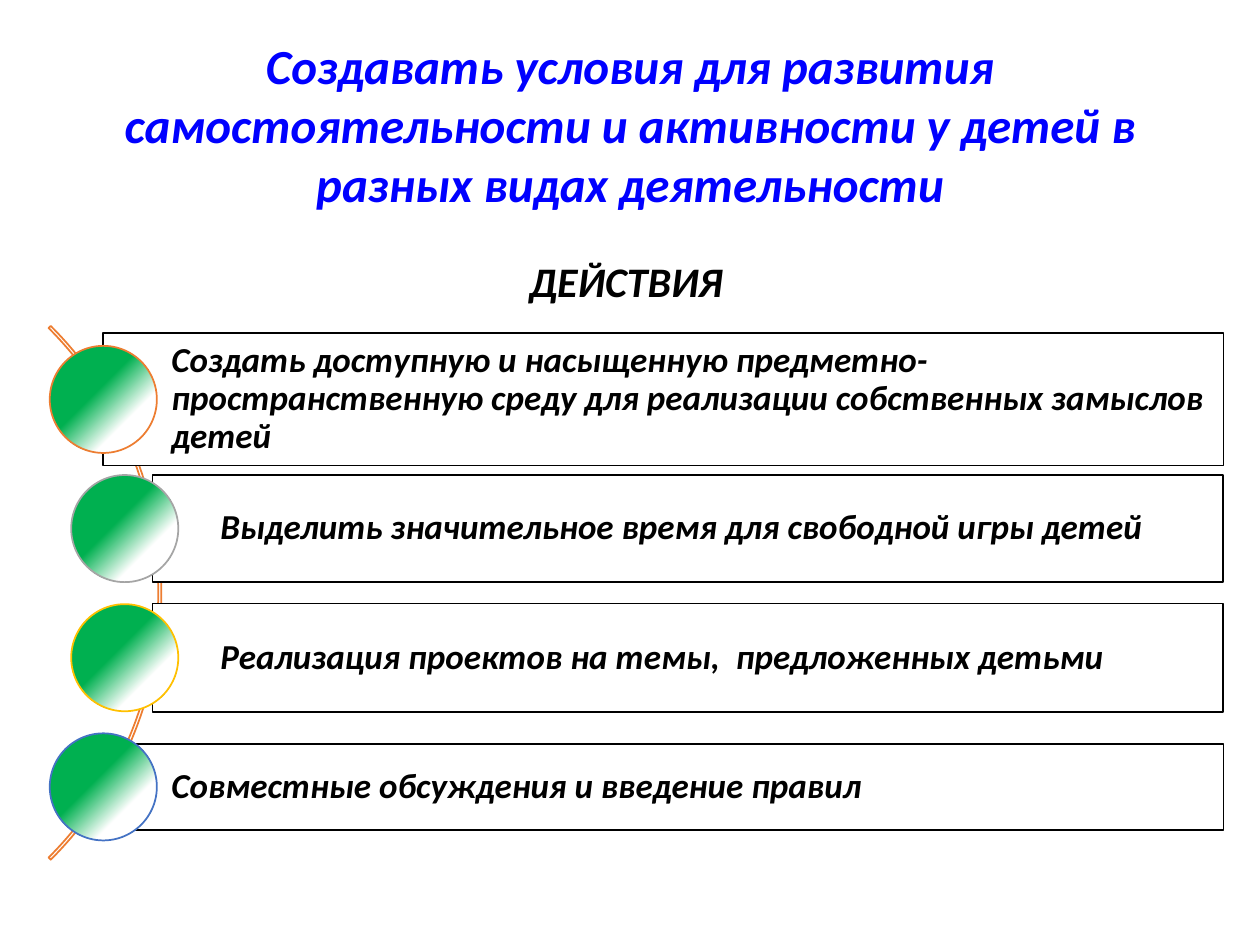
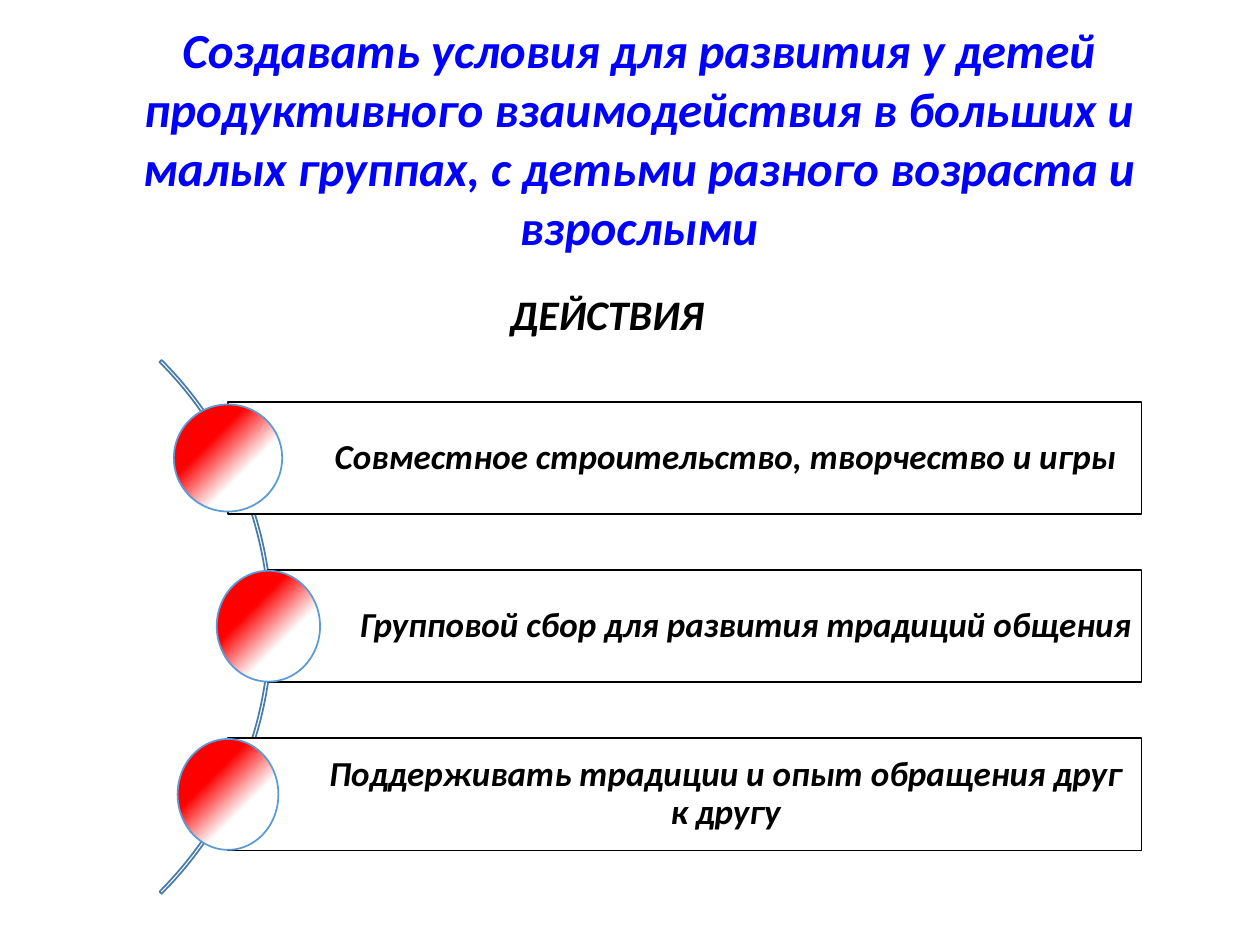
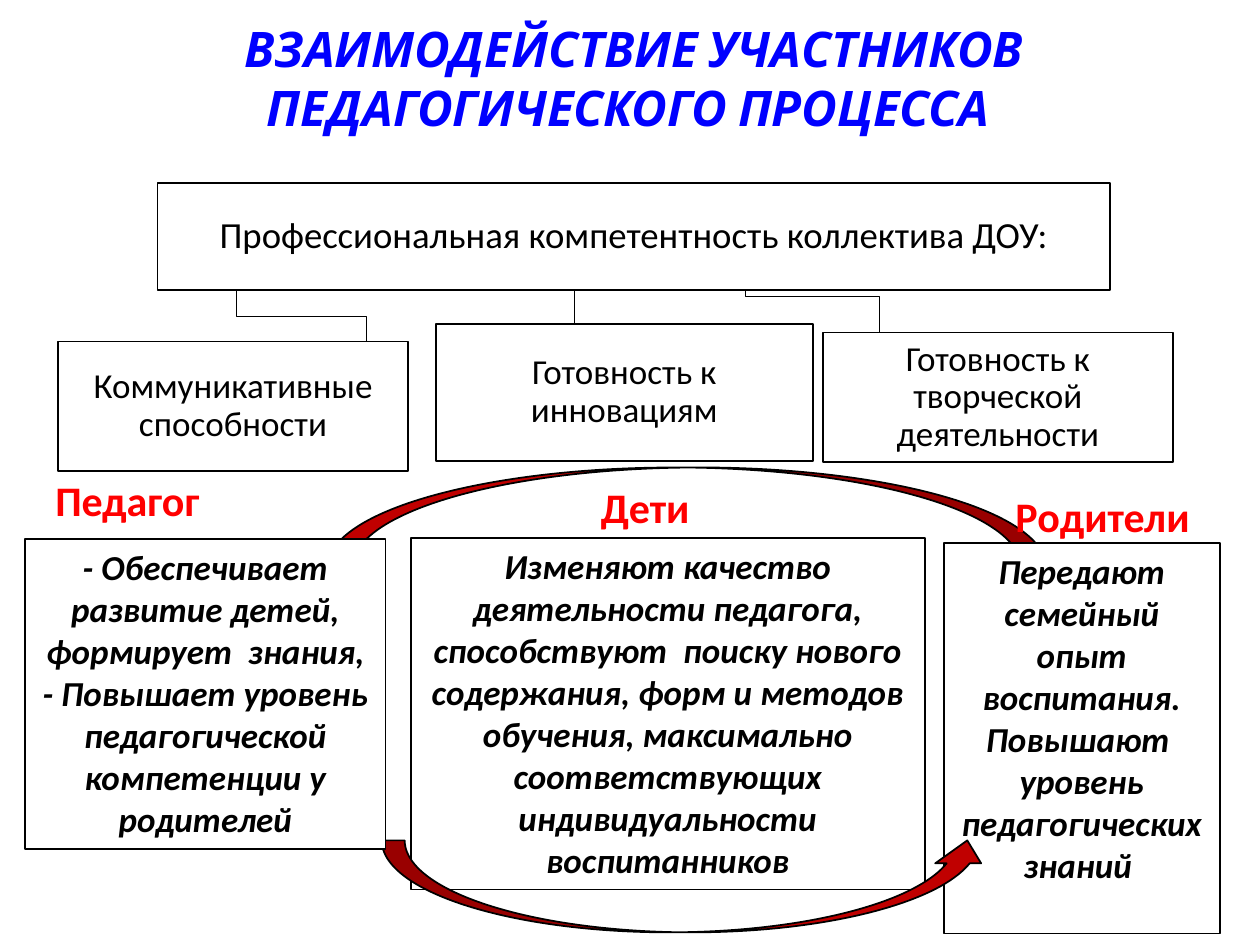
from lxml import etree
from pptx import Presentation, util as u
from pptx.dml.color import RGBColor
from pptx.enum import shapes as s, text as t
from pptx.oxml.ns import qn

WIDTH, HEIGHT = 10, 7.5
BLUE, BLACK, WHITE, RED, CRIMSON = "0000FF", "000000", "FFFFFF", "FF0000", "C00000"
BODY = "Calibri"
NO_BREAK_INSETS = (0.01,) * 4
ARC_SIZE = 5.99

ACTION_SLIDES = [
    dict(
        title="Создавать условия для развития самостоятельности и активности у детей в разных видах деятельности",
        title_at=(0.56, 0.15, 8.88, 1.68),
        heading_at=(4.1, 1.98, 2.15, 0.5),
        arc_at=(-4.71, 1.71), arc_line="ED7D31",
        first_centre=3.17, pitch=1.025, right=9.71, indent=0.54, align="LEFT",
        gradient=[(0, "00B050"), (43, "00B050"), (71, WHITE)],
        rows=[
            ("Создать доступную и насыщенную предметно-пространственную среду для реализации собственных замыслов детей",
             0.82, 1.05, 0.82, (0.85, 0.85), "ED7D31"),
            ("Выделить значительное время для свободной игры детей",
             1.21, 0.85, 0.99, (0.85, 0.85), "A5A5A5"),
            ("Реализация проектов на темы,  предложенных детьми",
             1.21, 0.86, 0.99, (0.85, 0.85), "FFC000"),
            ("Совместные обсуждения и введение правил",
             0.82, 0.68, 0.82, (0.85, 0.85), "4472C4"),
        ],
    ),
    dict(
        title="Создавать условия для развития у детей продуктивного взаимодействия в больших и малых группах, с детьми разного возраста и взрослыми",
        title_at=(0.5, 0, 9.14, 2.2),
        heading_at=(3.95, 2.24, 2.24, 0.5),
        arc_at=(-3.83, 1.98), arc_line="497CAB",
        first_centre=3.635, pitch=1.335, right=9.06, indent=0.71, align="CENTER",
        gradient=[(0, RED), (34, RED), (64, WHITE)],
        rows=[
            ("Совместное строительство, творчество и игры",
             1.81, 0.89, 1.81, (0.86, 0.85), "5B9BD5"),
            ("Групповой сбор для развития традиций общения",
             2.13, 0.89, 2.13, (0.82, 0.88), "5B9BD5"),
            ("Поддерживать традиции и опыт обращения друг к другу",
             1.81, 0.89, 1.81, (0.8, 0.88), "5B9BD5"),
        ],
    ),
]

PROCESS_TITLE = "ВЗАИМОДЕЙСТВИЕ УЧАСТНИКОВ ПЕДАГОГИЧЕСКОГО ПРОЦЕССА "
COMPETENCES = [
    ("Профессиональная компетентность коллектива ДОУ:", (1.25, 1.45, 7.56, 0.85), 21),
    ("Готовность к творческой деятельности", (6.53, 2.64, 2.78, 1.03), 20),
    ("Готовность к инновациям", (3.46, 2.57, 2.99, 1.09), 20),
    ("Коммуникативные способности", (0.46, 2.71, 2.78, 1.03), 20),
]
BRANCHES = [
    [(1.88, 2.31), (1.88, 2.51), (2.91, 2.51), (2.91, 2.71)],
    [(5.92, 2.3), (5.92, 2.35), (6.98, 2.35), (6.98, 2.64)],
]
STRAIGHT_BRANCH = (4.56, 2.3, 4.56, 2.57)
ROLES = [
    ("Педагог", (0.34, 3.72, 1.82, 0.5)),
    ("Дети", (4.67, 3.77, 0.95, 0.5)),
    ("Родители", (7.96, 3.84, 2.04, 0.5)),
]
CHILDREN = (["Изменяют качество деятельности педагога, способствуют  поиску нового содержания, форм и методов обучения, максимально соответствующих индивидуальности воспитанников"],
            (3.26, 4.27, 4.08, 2.79))
PARENTS = (["Передают семейный опыт воспитания.", "Повышают  уровень педагогических знаний "],
           (7.49, 4.31, 2.19, 3.1))
TEACHER = (["- Обеспечивает развитие детей, формирует  знания,\v- Повышает уровень педагогической компетенции у родителей"],
           (0.2, 4.28, 2.86, 2.46))
UPPER_ARROW = (2.5, 3.71, 5.8, 0.79)
LOWER_ARROW = (3.03, 6.67, 4.83, 0.73)


def inches(values):
    return [u.Inches(value) for value in values]


def colour(value):
    return RGBColor.from_string(value)


def outline(item, line, width=1):
    if line:
        item.line.color.rgb = colour(line)
        item.line.width = u.Pt(width)
    else:
        item.line.fill.background()


def shape(slide, kind, at, fill=WHITE, line=BLACK):
    item = slide.shapes.add_shape(getattr(s.MSO_SHAPE, kind), *inches(at))
    item.shadow.inherit = False
    if fill:
        item.fill.solid()
        item.fill.fore_color.rgb = colour(fill)
    else:
        item.fill.background()
    outline(item, line)
    return item


def write(item, paragraphs, size, ink=BLACK, font=BODY, bold=True, italic=True,
          align="CENTER", anchor="TOP", insets=(0.1, 0.05, 0.1, 0.05), spacing=None):
    frame = item.text_frame
    frame.word_wrap = True
    frame.vertical_anchor = getattr(t.MSO_ANCHOR, anchor)
    (frame.margin_left, frame.margin_top,
     frame.margin_right, frame.margin_bottom) = inches(insets)
    for index, words in enumerate(paragraphs):
        paragraph = frame.add_paragraph() if index else frame.paragraphs[0]
        paragraph.alignment = getattr(t.PP_ALIGN, align)
        if spacing:
            paragraph.line_spacing = spacing
        for part, line in enumerate(words.split("\v")):
            if part:
                paragraph.add_line_break()
            run = paragraph.add_run()
            run.text = line
            run.font.size = u.Pt(size)
            run.font.name = font
            run.font.bold, run.font.italic = bold, italic
            run.font.color.rgb = colour(ink)


def title(slide, words, at, kind="ROUNDED_RECTANGLE", font=BODY):
    write(shape(slide, kind, at, line=None), [words], 28, BLUE, font)


def label(slide, words, at, ink, italic):
    write(slide.shapes.add_textbox(*inches(at)), [words], 24, ink, italic=italic, align="LEFT")


def shade(item, stops):
    item.fill.gradient()
    gradient = item.element.spPr.find(qn("a:gradFill"))
    for child in list(gradient):
        gradient.remove(child)
    stop_list = etree.SubElement(gradient, qn("a:gsLst"))
    for share, tint in stops:
        stop = etree.SubElement(stop_list, qn("a:gs"), pos=str(share * 1000))
        etree.SubElement(stop, qn("a:srgbClr"), val=tint)
    etree.SubElement(gradient, qn("a:lin"), ang=str(45 * 60000), scaled="0")


def action_slide(slide, content):
    title(slide, content["title"], content["title_at"])
    label(slide, "ДЕЙСТВИЯ", content["heading_at"], BLACK, True)
    arc = shape(slide, "BLOCK_ARC", (*content["arc_at"], ARC_SIZE, ARC_SIZE),
                None, content["arc_line"])
    for index, value in enumerate((189, 27, 0.004)):
        arc.adjustments[index] = value
    for index, (words, left, height, bubble_x, (wide, high), rim) in enumerate(content["rows"]):
        centre = content["first_centre"] + index * content["pitch"]
        bar = shape(slide, "RECTANGLE",
                    (left, centre - height / 2, content["right"] - left, height))
        write(bar, [words], 20, align=content["align"], anchor="MIDDLE",
              insets=(content["indent"], 0.06, 0.06, 0.06), spacing=0.9)
        bubble = shape(slide, "OVAL",
                       (bubble_x - wide / 2, centre - high / 2, wide, high), line=rim)
        shade(bubble, content["gradient"])


def branch(slide, points):
    start, *rest = [tuple(inches(point)) for point in points]
    builder = slide.shapes.build_freeform(*start)
    builder.add_line_segments(rest, close=False)
    item = builder.convert_to_shape()
    item.shadow.inherit = False
    item.fill.background()
    outline(item, BLACK, 0.5)


def participant(slide, paragraphs, at):
    write(shape(slide, "RECTANGLE", at), paragraphs, 20)


def process_slide(slide):
    title(slide, PROCESS_TITLE, (0.7, 0.1, 8.66, 1.04), "RECTANGLE", "Cabin")
    for points in BRANCHES:
        branch(slide, points)
    stem = slide.shapes.add_connector(s.MSO_CONNECTOR.STRAIGHT, *inches(STRAIGHT_BRANCH))
    outline(stem, BLACK, 0.5)
    etree.SubElement(stem.element.spPr, qn("a:effectLst"))
    for words, at, size in COMPETENCES:
        write(shape(slide, "RECTANGLE", at), [words], size, bold=False, italic=False,
              anchor="MIDDLE", insets=NO_BREAK_INSETS, spacing=0.9)
    participant(slide, *CHILDREN)
    shape(slide, "CURVED_UP_ARROW", UPPER_ARROW, CRIMSON).rotation = 180
    for words, at in ROLES:
        label(slide, words, at, RED, False)
    participant(slide, *PARENTS)
    shape(slide, "CURVED_UP_ARROW", LOWER_ARROW, CRIMSON)
    participant(slide, *TEACHER)


def main():
    deck = Presentation()
    deck.slide_width, deck.slide_height = inches((WIDTH, HEIGHT))
    blank = deck.slide_layouts[6]
    for content in ACTION_SLIDES:
        action_slide(deck.slides.add_slide(blank), content)
    process_slide(deck.slides.add_slide(blank))
    deck.save("out.pptx")


if __name__ == "__main__":
    main()
